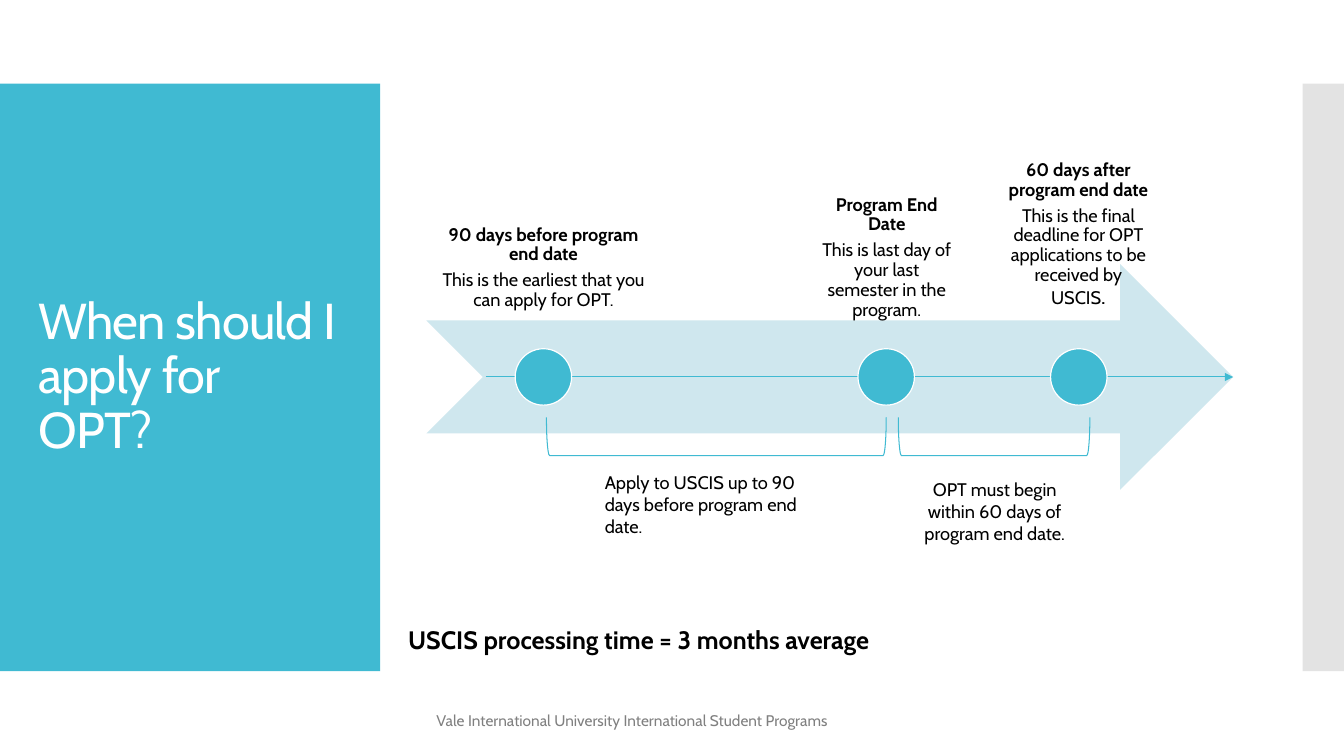
from dataclasses import dataclass

from lxml import etree
from pptx import Presentation
from pptx.dml.color import RGBColor
from pptx.enum.shapes import MSO_CONNECTOR, MSO_SHAPE
from pptx.enum.text import MSO_ANCHOR, MSO_AUTO_SIZE, PP_ALIGN
from pptx.oxml.ns import qn
from pptx.util import Inches, Pt

RECT, OVAL = MSO_SHAPE.RECTANGLE, MSO_SHAPE.OVAL
ARROW, BRACKET = MSO_SHAPE.NOTCHED_RIGHT_ARROW, MSO_SHAPE.LEFT_BRACKET
TOP, MIDDLE, BOTTOM = MSO_ANCHOR.TOP, MSO_ANCHOR.MIDDLE, MSO_ANCHOR.BOTTOM
LEFT, CENTER = PP_ALIGN.LEFT, PP_ALIGN.CENTER

FONT = "Cabin"
COLORS = {
    "teal": "40BAD2", "pale": "CFE7EE", "gray": "C8C8C8",
    "footer": "808080", "black": "000000", "white": "FFFFFF",
}
BODY_SIZE = 13
AXIS_Y = 3.74
DOT = 0.56
BRACKET_TOP, BRACKET_DEPTH = 4.14, 0.38

Box = tuple[float, float, float, float]


@dataclass
class Run:
    text: str
    size: float = BODY_SIZE
    bold: bool = False
    color: str = "black"


@dataclass
class Milestone:
    dot_left: float
    box: Box
    anchor: MSO_ANCHOR
    heading: str
    detail: list[Run]


@dataclass
class Period:
    left: float
    width: float
    box: Box
    align: PP_ALIGN
    text: str


MILESTONES = [
    Milestone(5.11, (4.23, 0.94, 2.32, 2.24), BOTTOM, "90 days before program end date",
              [Run("This is the earliest that you can apply for OPT.")]),
    Milestone(8.51, (8.01, 1.84, 1.57, 1.43), TOP, "Program End Date",
              [Run("This is last day of your last semester in the program.")]),
    Milestone(10.42, (9.9, 1.23, 1.59, 1.94), BOTTOM, "60 days after program end date",
              [Run("This is the final deadline for OPT applications to be received by USCIS"),
               Run(".", 16)]),
]
PERIODS = [
    Period(5.42, 3.37, (5.9, 4.63, 2.41, 0.75), LEFT,
           "Apply to USCIS up to 90 days before program end date."),
    Period(8.91, 1.9, (8.91, 4.7, 1.91, 0.75), CENTER,
           "OPT must begin within 60 days of program end date."),
]


def rgb(name: str) -> RGBColor:
    return RGBColor.from_string(COLORS[name])


def add_run(p, run: Run):
    r = p.add_run()
    r.text = run.text
    r.font.name = FONT
    r.font.size = Pt(run.size)
    r.font.bold = run.bold
    r.font.color.rgb = rgb(run.color)
    return r


def add_shape(s, kind: MSO_SHAPE, box: Box, fill: str = "", line: str = "", width: float = 0.75):
    """Add a flat shape; an empty colour name means no fill or no line."""
    sp = s.shapes.add_shape(kind, *map(Inches, box))
    sp.shadow.inherit = False
    if fill:
        sp.fill.solid()
        sp.fill.fore_color.rgb = rgb(fill)
    else:
        sp.fill.background()
    if line:
        sp.line.color.rgb = rgb(line)
        sp.line.width = Pt(width)
    else:
        sp.line.fill.background()
    return sp


def add_text(s, box: Box, paragraphs: list[list[Run]], align: PP_ALIGN = LEFT,
             anchor: MSO_ANCHOR = TOP, wrap: bool = True):
    tf = s.shapes.add_textbox(*map(Inches, box)).text_frame
    tf.word_wrap = wrap
    tf.vertical_anchor = anchor
    for i, runs in enumerate(paragraphs):
        p = tf.add_paragraph() if i else tf.paragraphs[0]
        p.alignment = align
        for run in runs:
            add_run(p, run)
    return tf


def add_panels_and_title(s) -> None:
    title = s.shapes.title
    title.left, title.top, title.width, title.height = map(Inches, (0.28, 1.23, 3.22, 5.03))
    panel = add_shape(s, RECT, (0, 0.83, 3.77, 5.83), "teal")
    edge = add_shape(s, RECT, (12.92, 0.83, 0.41, 5.83), "gray")
    color = edge.element.spPr.find(qn("a:solidFill"))[0]
    etree.SubElement(color, qn("a:alpha"), val="50000")
    for sp in (panel, edge):
        title.element.addprevious(sp.element)

    tf = title.text_frame
    tf.word_wrap = True
    tf.auto_size = MSO_AUTO_SIZE.NONE
    tf.vertical_anchor = MIDDLE
    p = tf.paragraphs[0]
    p.alignment = LEFT
    p.line_spacing = 0.9
    r = add_run(p, Run("When should I apply for OPT?", 36, color="white"))
    r.font._element.set("spc", "-60")


def add_milestone(s, item: Milestone) -> None:
    tf = add_text(s, item.box, [[Run(item.heading, bold=True)], item.detail], CENTER, item.anchor)
    tf.margin_left = tf.margin_right = tf.margin_top = tf.margin_bottom = Inches(0.1)
    for p in tf.paragraphs:
        p.line_spacing = 0.9
        p.space_after = Pt(4.5)
    add_shape(s, OVAL, (item.dot_left, AXIS_Y - DOT / 2, DOT, DOT), "teal", "white", 0.85)


def add_axis(s) -> None:
    line = s.shapes.add_connector(MSO_CONNECTOR.STRAIGHT, Inches(4.82), Inches(AXIS_Y),
                                  Inches(12.23), Inches(AXIS_Y))
    line.line.color.rgb = rgb("teal")
    line.line.width = Pt(0.75)
    etree.SubElement(line.line._get_or_add_ln(), qn("a:tailEnd"), type="triangle")
    etree.SubElement(line.element.spPr, qn("a:effectLst"))


def add_period(s, item: Period) -> None:
    """Add a bracket that opens upward, with its text below."""
    left = item.left + (item.width - BRACKET_DEPTH) / 2
    top = BRACKET_TOP + (BRACKET_DEPTH - item.width) / 2
    sp = add_shape(s, BRACKET, (left, top, BRACKET_DEPTH, item.width), line="teal")
    sp.rotation = 270
    add_text(s, item.box, [[Run(item.text)]], item.align)


def main() -> None:
    prs = Presentation()
    prs.slide_width, prs.slide_height = Inches(13.33), Inches(7.5)
    s = prs.slides.add_slide(prs.slide_layouts.get_by_name("Title Only"))

    add_panels_and_title(s)
    add_shape(s, ARROW, (4.23, 2.62, 8, 2.24), "pale")
    add_axis(s)
    for milestone in MILESTONES:
        add_milestone(s, milestone)
    for period in PERIODS:
        add_period(s, period)
    add_text(s, (3.95, 6.14, 4.84, 0.4),
             [[Run("USCIS processing time = 3 months average", 18, True)]], wrap=False)
    add_text(s, (4.23, 6.95, 6.46, 0.4),
             [[Run("Vale International University International Student Programs", 11,
                   color="footer")]], anchor=MIDDLE)
    prs.save("out.pptx")


if __name__ == "__main__":
    main()
